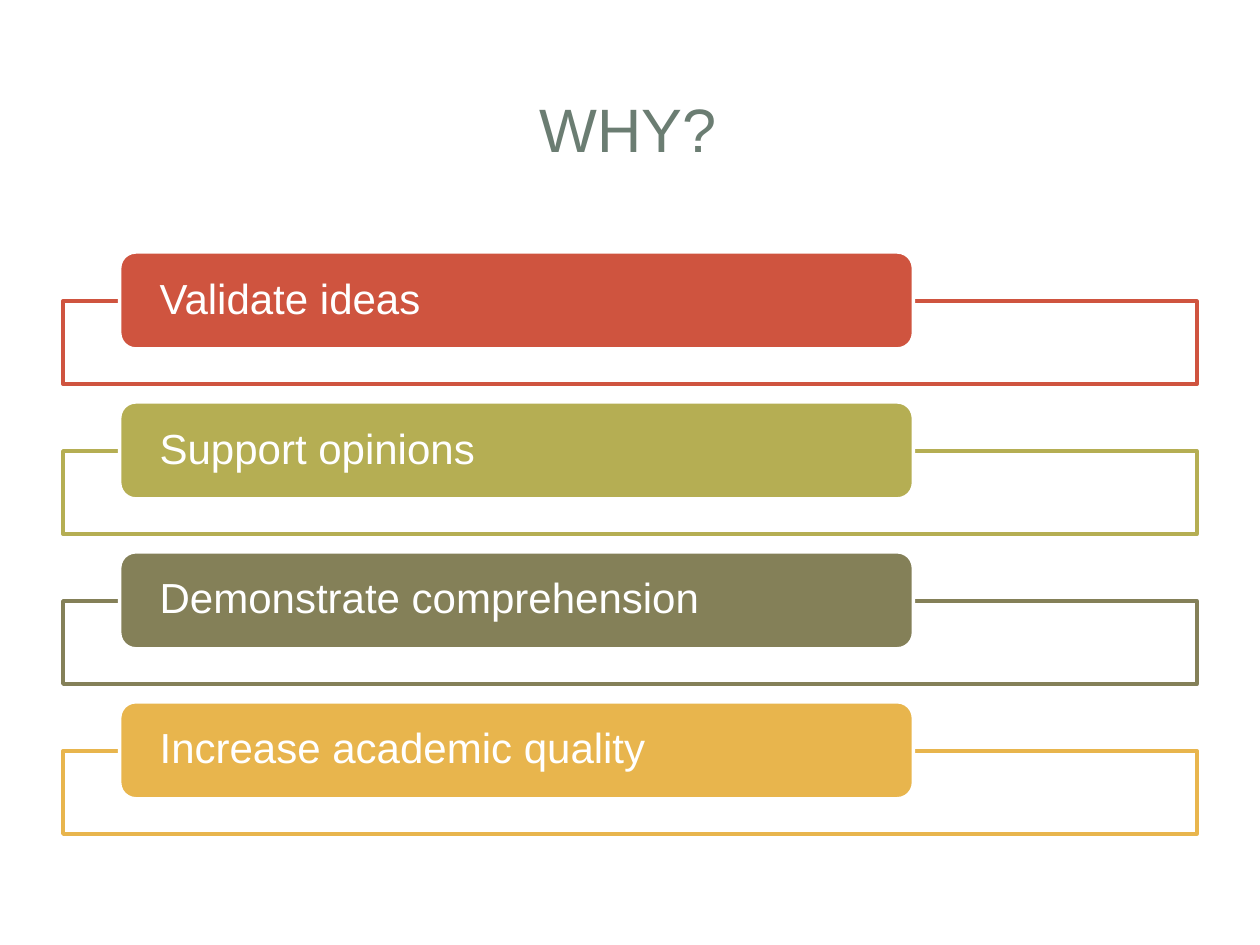
from pptx import Presentation
from pptx.dml.color import RGBColor
from pptx.enum.shapes import MSO_SHAPE
from pptx.enum.text import MSO_ANCHOR, PP_ALIGN
from pptx.util import Inches, Pt

RECTANGLE = MSO_SHAPE.RECTANGLE
ROUNDED = MSO_SHAPE.ROUNDED_RECTANGLE
MIDDLE = MSO_ANCHOR.MIDDLE
CENTER, LEFT = PP_ALIGN.CENTER, PP_ALIGN.LEFT

COLORS = {
    "white": "FFFFFF",
    "title": "6B7D72",
    "red": "CF543F",
    "green": "B5AE53",
    "olive": "848058",
    "amber": "E8B54D",
}
REASONS = [
    ("Validate ideas", "red"),
    ("Support opinions", "green"),
    ("Demonstrate comprehension", "olive"),
    ("Increase academic quality", "amber"),
]
TITLE_BOX = (0.47, 0.45, 9.03, 1.14)
LIST_BOX = (0.5, 2, 9, 4.76)
LABEL_INDENT, LABEL_SHARE = 0.05, 0.7
LABEL_HEIGHT, FRAME_TOP, FRAME_HEIGHT = 0.77, 0.39, 0.66


def color(name):
    return RGBColor.from_string(COLORS[name])


def apply_format(target, values):
    for name, value in values.items():
        setattr(target, name, value)


def write_text(shape, text, size, color_name, align, inset, para_format):
    frame = shape.text_frame
    apply_format(frame, {
        "word_wrap": True, "vertical_anchor": MIDDLE,
        "margin_left": Inches(inset), "margin_right": Inches(inset),
        "margin_top": 0, "margin_bottom": 0,
    })
    para = frame.paragraphs[0]
    apply_format(para, {"alignment": align, **para_format})
    span = para.add_run()
    span.text = text
    apply_format(span.font, {"name": "Arial", "size": Pt(size)})
    span.font.color.rgb = color(color_name)


def add_block(page, kind, box, fill, line):
    block = page.shapes.add_shape(kind, *map(Inches, box))
    block.shadow.inherit = False
    block.fill.solid()
    block.fill.fore_color.rgb = color(fill)
    block.line.color.rgb = color(line)
    block.line.width = Pt(2)
    return block


def add_title(page, box, text):
    title = page.shapes.add_textbox(*map(Inches, box))
    write_text(title, text, 35, "title", CENTER, 0.1, {})


def add_reason(page, box, text, accent):
    left, top, width, _ = box
    add_block(page, RECTANGLE, (left, top + FRAME_TOP, width, FRAME_HEIGHT),
              "white", accent)
    label_box = (left + width * LABEL_INDENT, top,
                 width * LABEL_SHARE, LABEL_HEIGHT)
    label = add_block(page, ROUNDED, label_box, accent, "white")
    write_text(label, text, 24, "white", LEFT, 0.28, {"line_spacing": 0.9})


def add_reasons(page, box, reasons):
    left, top, width, height = box
    pitch = height / len(reasons)
    for row, (text, accent) in enumerate(reasons):
        add_reason(page, (left, top + row * pitch, width, pitch), text, accent)


def main():
    deck = Presentation()
    apply_format(deck, {"slide_width": Inches(10), "slide_height": Inches(7.5)})
    page = deck.slides.add_slide(deck.slide_layouts[6])
    page.background.fill.solid()
    page.background.fill.fore_color.rgb = color("white")
    add_title(page, TITLE_BOX, "WHY?")
    add_reasons(page, LIST_BOX, REASONS)
    deck.save("out.pptx")


if __name__ == "__main__":
    main()
